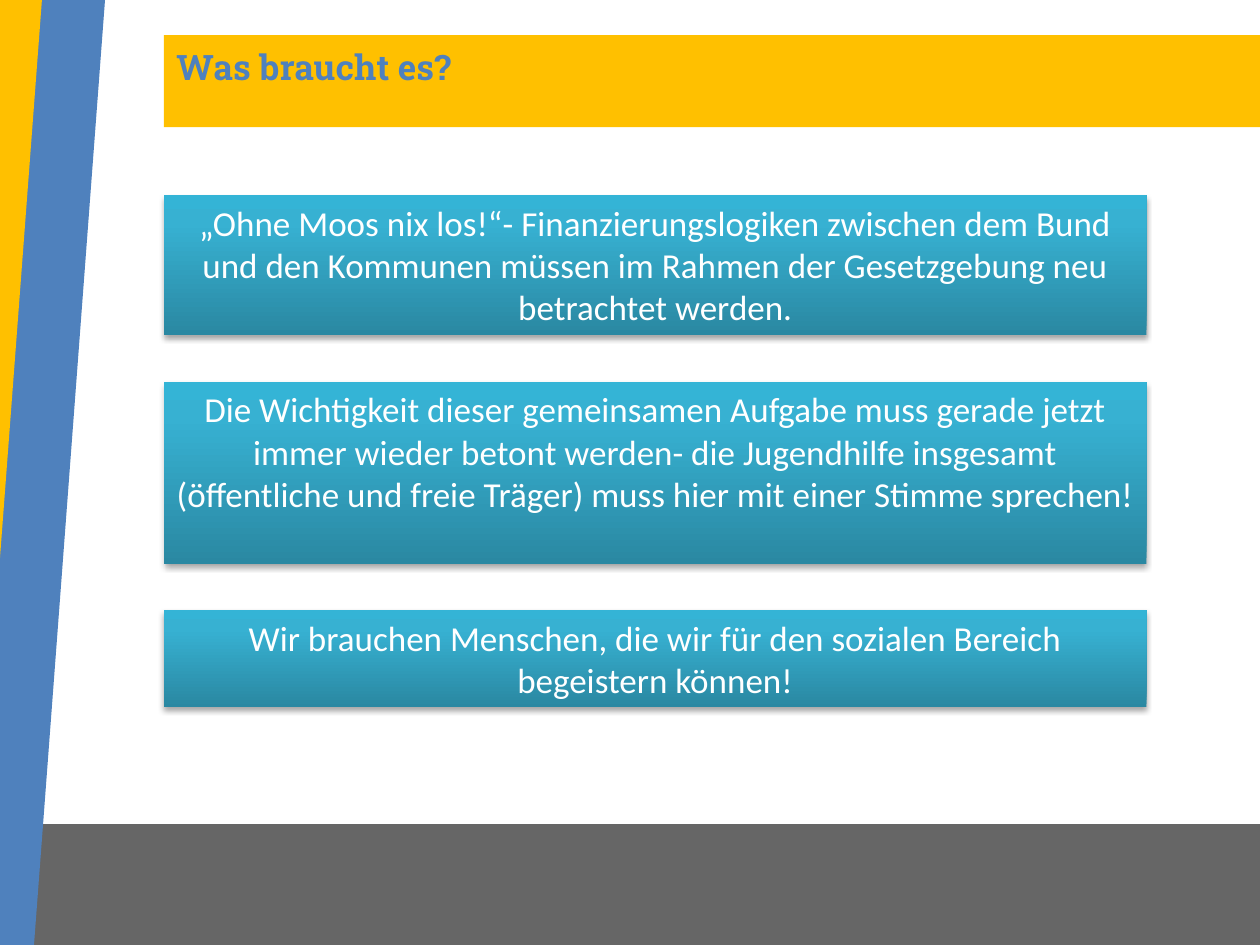
from dataclasses import dataclass

from lxml import etree
from pptx import Presentation
from pptx import util as u
from pptx.dml.color import RGBColor
from pptx.enum import shapes, text
from pptx.oxml import parse_xml
from pptx.oxml.ns import nsdecls, qn

BLUE, YELLOW, BLACK, WHITE = "4F81BD", "FFC000", "000000", "FFFFFF"
GRADIENT = {0: "2A88A2", 80: "37B1D2", 100: "34B4D6"}
LEFT = 1.3


@dataclass
class Block:
    left: float
    top: float
    width: float
    height: float
    color: str = BLUE
    rotation: float = 0


@dataclass
class Statement:
    top: float
    height: float
    words: str


FOOTER = Block(-0.12, 6.54, 11.18, 0.99, BLACK)
STRIPES = [
    Block(0.04, -0.23, 0.51, 8, BLUE, 4.3),
    Block(-0.37, -0.31, 0.51, 5.74, YELLOW, 4.3),
]
TITLE_BAR = Block(LEFT, 0.28, 9.06, 0.73, YELLOW)
STATEMENTS = [
    Statement(1.55, 1.11, "„Ohne Moos nix los!“- Finanzierungslogiken zwischen dem Bund und den "
              "Kommunen müssen im Rahmen der Gesetzgebung neu betrachtet werden."),
    Statement(3.03, 1.45, "Die Wichtigkeit dieser gemeinsamen Aufgabe muss gerade jetzt immer "
              "wieder betont werden- die Jugendhilfe insgesamt (öffentliche und freie Träger) "
              "muss hier mit einer Stimme sprechen!"),
    Statement(4.84, 0.77, "Wir brauchen Menschen, die wir für den sozialen Bereich "
              "begeistern können!"),
]


def rgb(value: str) -> RGBColor:
    return RGBColor.from_string(value)


def draw_block(slide, block: Block):
    shape = slide.shapes.add_shape(
        shapes.MSO_SHAPE.RECTANGLE,
        *map(u.Inches, (block.left, block.top, block.width, block.height)))
    shape.rotation = block.rotation
    shape.shadow.inherit = False
    shape.fill.solid()
    shape.fill.fore_color.rgb = rgb(block.color)
    shape.line.fill.background()
    return shape


def set_opacity(shape, percent: int) -> None:
    color = shape._element.spPr.find(qn("a:solidFill"))[0]
    etree.SubElement(color, qn("a:alpha")).set("val", str(percent * 1000))


def set_gradient(shape) -> None:
    stops = "".join(
        f'<a:gs pos="{position * 1000}"><a:srgbClr val="{color}"/></a:gs>'
        for position, color in GRADIENT.items())
    properties = shape._element.spPr
    properties.replace(properties.find(qn("a:solidFill")), parse_xml(
        f'<a:gradFill {nsdecls("a")} rotWithShape="1"><a:gsLst>{stops}</a:gsLst>'
        '<a:lin ang="16200000" scaled="0"/></a:gradFill>'))


def set_shadow(shape) -> None:
    shape._element.spPr.find(qn("a:effectLst")).append(parse_xml(
        f'<a:outerShdw {nsdecls("a")} blurRad="{u.Pt(3.1)}" dist="{u.Pt(1.8)}" '
        f'dir="5400000" rotWithShape="0"><a:srgbClr val="{BLACK}">'
        '<a:alpha val="35000"/></a:srgbClr></a:outerShdw>'))


def write_text(shape, words: str, color: str, alignment, **font_format) -> None:
    frame = shape.text_frame
    frame.text = words
    frame_format = {"word_wrap": True, "auto_size": text.MSO_AUTO_SIZE.NONE,
                    "vertical_anchor": text.MSO_ANCHOR.TOP}
    for name, value in frame_format.items():
        setattr(frame, name, value)
    paragraph = frame.paragraphs[0]
    paragraph.alignment = alignment
    font = paragraph.runs[0].font
    for name, value in {"size": u.Pt(20), **font_format}.items():
        setattr(font, name, value)
    font.color.rgb = rgb(color)


def draw_title(slide) -> None:
    bar = draw_block(slide, TITLE_BAR)
    title = slide.shapes.title
    place = {"left": LEFT, "top": 0.31, "width": 8.7, "height": 0.44}
    for name, value in place.items():
        setattr(title, name, u.Inches(value))
    write_text(title, "Was braucht es?", BLUE, text.PP_ALIGN.LEFT,
               name="Roboto Slab", bold=True)
    bar._element.addnext(title._element)


def draw_statement(slide, statement: Statement) -> None:
    box = draw_block(slide, Block(LEFT, statement.top, 7.8, statement.height))
    set_gradient(box)
    set_shadow(box)
    write_text(box, statement.words, WHITE, text.PP_ALIGN.CENTER, name="Calibri")


def main() -> None:
    deck = Presentation()
    deck.slide_width, deck.slide_height = u.Inches(10), u.Inches(7.5)
    slide = deck.slides.add_slide(deck.slide_layouts[5])
    set_opacity(draw_block(slide, FOOTER), 60)
    for stripe in STRIPES:
        draw_block(slide, stripe)
    draw_title(slide)
    for statement in STATEMENTS:
        draw_statement(slide, statement)
    deck.save("out.pptx")


if __name__ == "__main__":
    main()
